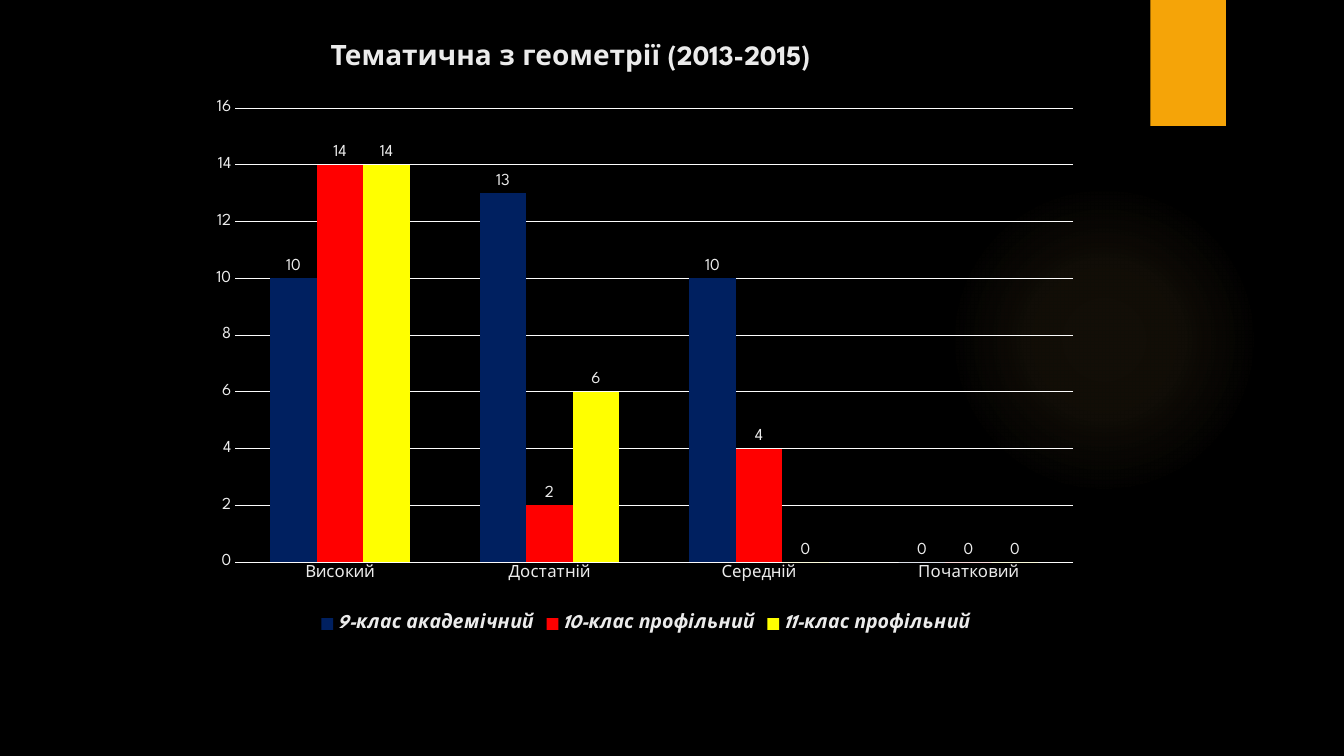
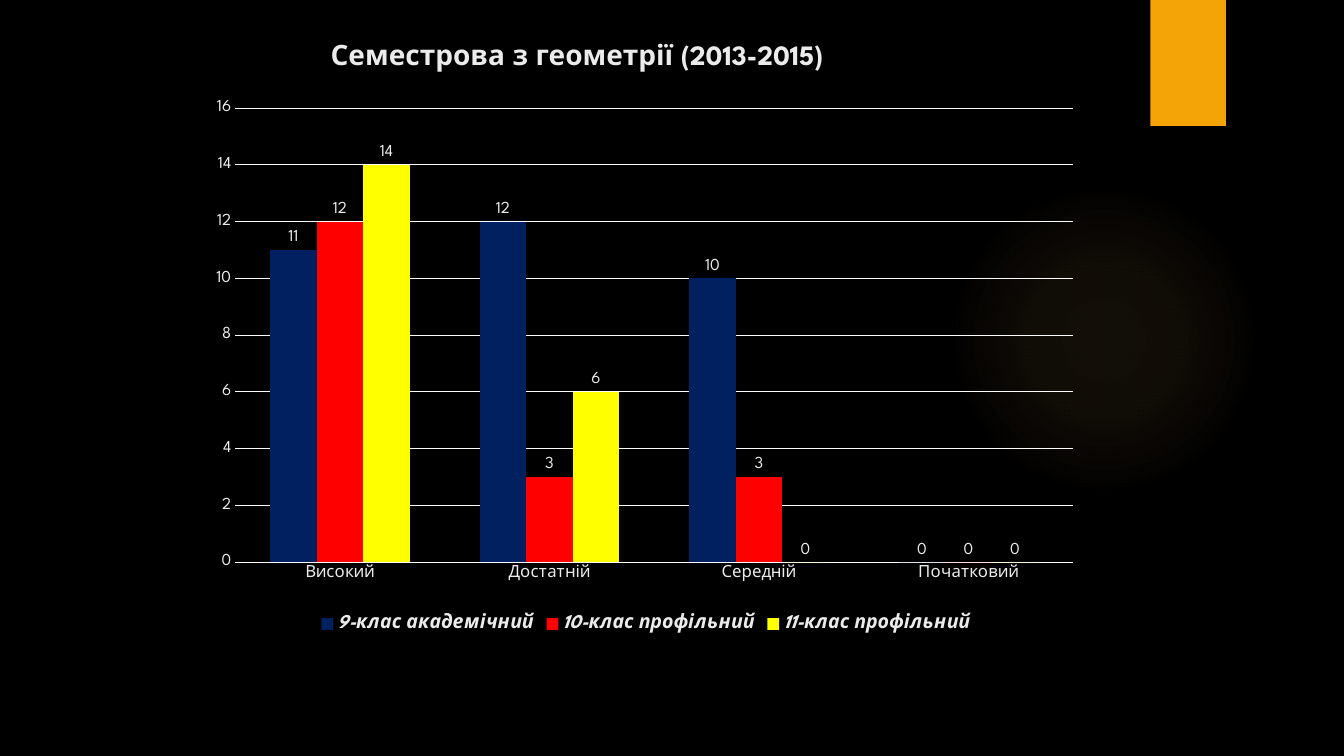
from dataclasses import dataclass

from lxml import etree
from pptx import Presentation
from pptx.chart.chart import Chart
from pptx.chart.data import CategoryChartData
from pptx.dml.color import RGBColor
from pptx.enum.chart import (XL_CHART_TYPE, XL_LABEL_POSITION,
                             XL_LEGEND_POSITION, XL_TICK_MARK)
from pptx.enum.shapes import MSO_SHAPE
from pptx.enum.text import MSO_ANCHOR, MSO_AUTO_SIZE, PP_ALIGN
from pptx.oxml import parse_xml
from pptx.oxml.ns import nsdecls, qn
from pptx.slide import Slide, SlideLayout
from pptx.text.text import Font
from pptx.util import Inches, Pt


@dataclass(frozen=True)
class Theme:
    font: str = "League Spartan"
    back: str = "000000"
    text: str = "EBEBEB"
    grid: str = "FCFCFC"
    gold: str = "F5A408"
    glow: str = "FAC96A"
    bars: tuple[str, ...] = ("002060", "FF0000", "FFFF00")
    title: int = 20
    legend: int = 14
    label: int = 12
    line: float = 0.75


@dataclass(frozen=True)
class Page:
    title: str
    rows: tuple[tuple[int, ...], ...]


THEME = Theme()
LEVELS = ("Високий", "Достатній", "Середній", "Початковий")
GRADES = ("9-клас академічний", "10-клас профільний", "11-клас профільний")
PLOT = {"x": 0.042, "y": 0.115, "w": 0.935, "h": 0.76}
GLOW = ((0, 7), (36, 6), (69, 0))  # stop and opacity, in percent
PAGES = (
    Page("Тематична з геометрії (2013-2015)",
         ((10, 13, 10, 0), (14, 2, 4, 0), (14, 6, 0, 0))),
    Page("Семестрова з геометрії (2013-2015)",
         ((11, 12, 10, 0), (12, 3, 3, 0), (14, 6, 0, 0))),
)


def color(code: str) -> RGBColor:
    return RGBColor.from_string(code)


def style(font: Font, size: int, bold: bool = False, italic: bool = False) -> None:
    font.name, font.size = THEME.font, Pt(size)
    font.bold, font.italic = bold, italic
    font.color.rgb = color(THEME.text)


def add_decor(slide: Slide, layout: SlideLayout) -> None:
    """Draw the glow and the gold tab, then hand them to the shared layout."""
    glow = slide.shapes.add_shape(MSO_SHAPE.OVAL, Inches(9.41), Inches(1.83),
                                  Inches(3.08), Inches(3.08))
    glow.fill.background()
    stops = "".join(
        f'<a:gs pos="{pos * 1000}"><a:srgbClr val="{THEME.glow}">'
        f'<a:alpha val="{alpha * 1000}"/></a:srgbClr></a:gs>'
        for pos, alpha in GLOW)
    fill = parse_xml(
        f'<a:gradFill {nsdecls("a")}><a:gsLst>{stops}</a:gsLst>'
        '<a:path path="circle"><a:fillToRect l="50000" t="50000" '
        'r="50000" b="50000"/></a:path></a:gradFill>')
    props = glow.element.spPr
    props.replace(props.find(qn("a:noFill")), fill)

    tab = slide.shapes.add_shape(MSO_SHAPE.RECTANGLE, Inches(11.41), Inches(0),
                                 Inches(0.75), Inches(1.25))
    tab.fill.solid()
    tab.fill.fore_color.rgb = color(THEME.gold)
    for shape in (glow, tab):
        shape.line.fill.background()
        shape.shadow.inherit = False
        layout.shapes.element.append(shape.element)


def add_title(slide: Slide, text: str) -> None:
    title = slide.shapes.title
    title.left, title.top = Inches(3.28), Inches(0.29)
    title.width, title.height = Inches(7), Inches(0.5)
    frame = title.text_frame
    frame.margin_left = frame.margin_right = Inches(0)
    frame.margin_top = frame.margin_bottom = Inches(0)
    frame.auto_size = MSO_AUTO_SIZE.NONE
    frame.vertical_anchor = MSO_ANCHOR.MIDDLE
    line = frame.paragraphs[0]
    line.alignment = PP_ALIGN.LEFT
    run = line.add_run()
    run.text = text
    style(run.font, THEME.title, bold=True)


def place_plot(chart: Chart) -> None:
    """Fix the inner plot area as shares of the chart frame."""
    area = chart.element.find(".//" + qn("c:plotArea"))
    for old in area.findall(qn("c:layout")):
        area.remove(old)
    layout = etree.Element(qn("c:layout"))
    manual = etree.SubElement(layout, qn("c:manualLayout"))
    parts = {"layoutTarget": "inner", "xMode": "edge", "yMode": "edge", **PLOT}
    for name, val in parts.items():
        etree.SubElement(manual, qn(f"c:{name}"), val=str(val))
    area.insert(0, layout)


def style_axes(chart: Chart) -> None:
    cats, vals = chart.category_axis, chart.value_axis
    for axis in (cats, vals):
        axis.major_tick_mark = axis.minor_tick_mark = XL_TICK_MARK.NONE
        style(axis.tick_labels.font, THEME.label)
    vals.minimum_scale, vals.maximum_scale, vals.major_unit = 0, 16, 2
    vals.has_major_gridlines = True
    vals.format.line.fill.background()
    for line in (cats.format.line, vals.major_gridlines.format.line):
        line.color.rgb = color(THEME.grid)
        line.width = Pt(THEME.line)


def add_bars(slide: Slide, page: Page) -> None:
    data = CategoryChartData(number_format="0")
    data.categories = LEVELS
    for grade, row in zip(GRADES, page.rows):
        data.add_series(grade, row)
    chart = slide.shapes.add_chart(
        XL_CHART_TYPE.COLUMN_CLUSTERED, Inches(1.96), Inches(0.39),
        Inches(8.89), Inches(5.93), data).chart
    chart.has_title = False
    style(chart.font, THEME.label)
    place_plot(chart)
    style_axes(chart)

    chart.has_legend = True
    chart.legend.position = XL_LEGEND_POSITION.BOTTOM
    chart.legend.include_in_layout = False
    style(chart.legend.font, THEME.legend, bold=True, italic=True)

    plot = chart.plots[0]
    plot.gap_width, plot.overlap = 150, 0
    plot.vary_by_categories = False
    for series, code in zip(plot.series, THEME.bars):
        series.format.fill.solid()
        series.format.fill.fore_color.rgb = color(code)
        labels = series.data_labels
        labels.show_value = True
        labels.position = XL_LABEL_POSITION.OUTSIDE_END
        style(labels.font, THEME.label)


def main() -> None:
    deck = Presentation()
    deck.slide_width, deck.slide_height = Inches(13.33), Inches(7.5)
    layout = deck.slide_layouts.get_by_name("Title Only")
    layout.background.fill.solid()
    layout.background.fill.fore_color.rgb = color(THEME.back)
    for index, page in enumerate(PAGES):
        slide = deck.slides.add_slide(layout)
        if index == 0:
            add_decor(slide, layout)
        add_bars(slide, page)
        add_title(slide, page.title)
    deck.save("out.pptx")


if __name__ == "__main__":
    main()
